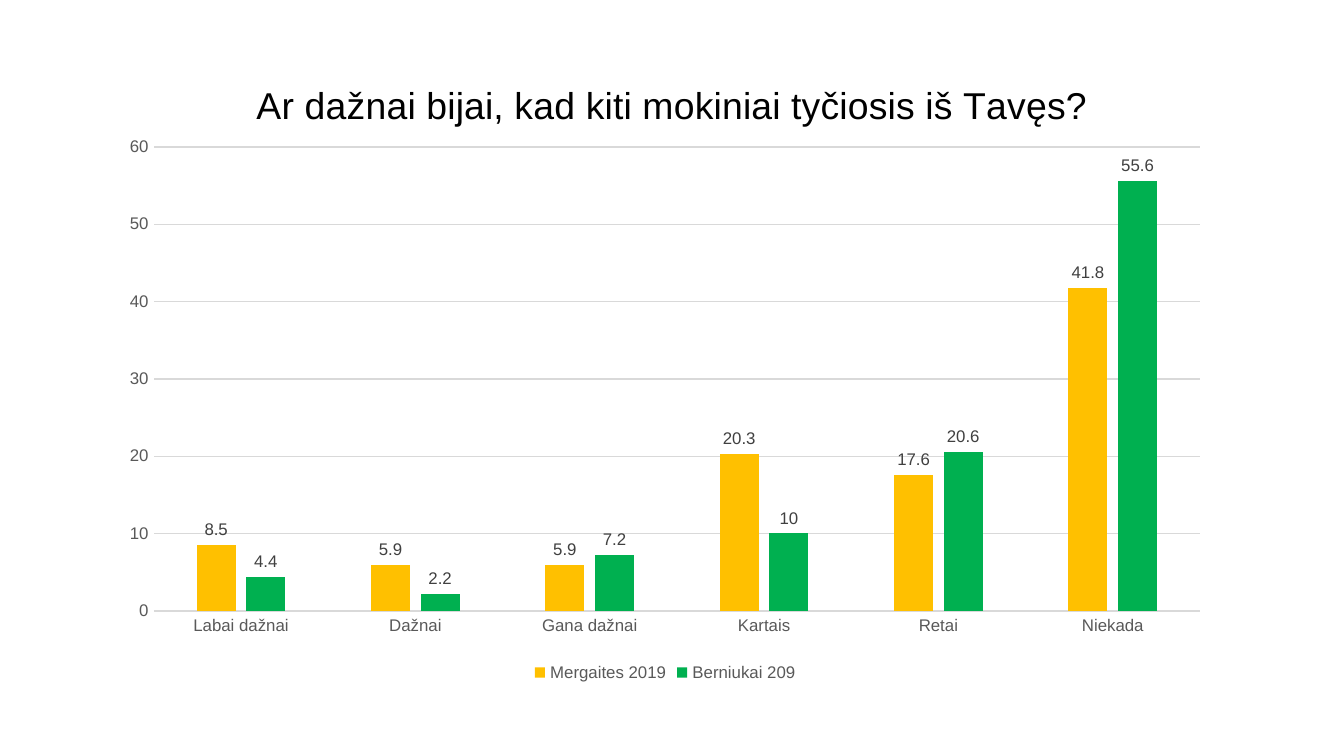
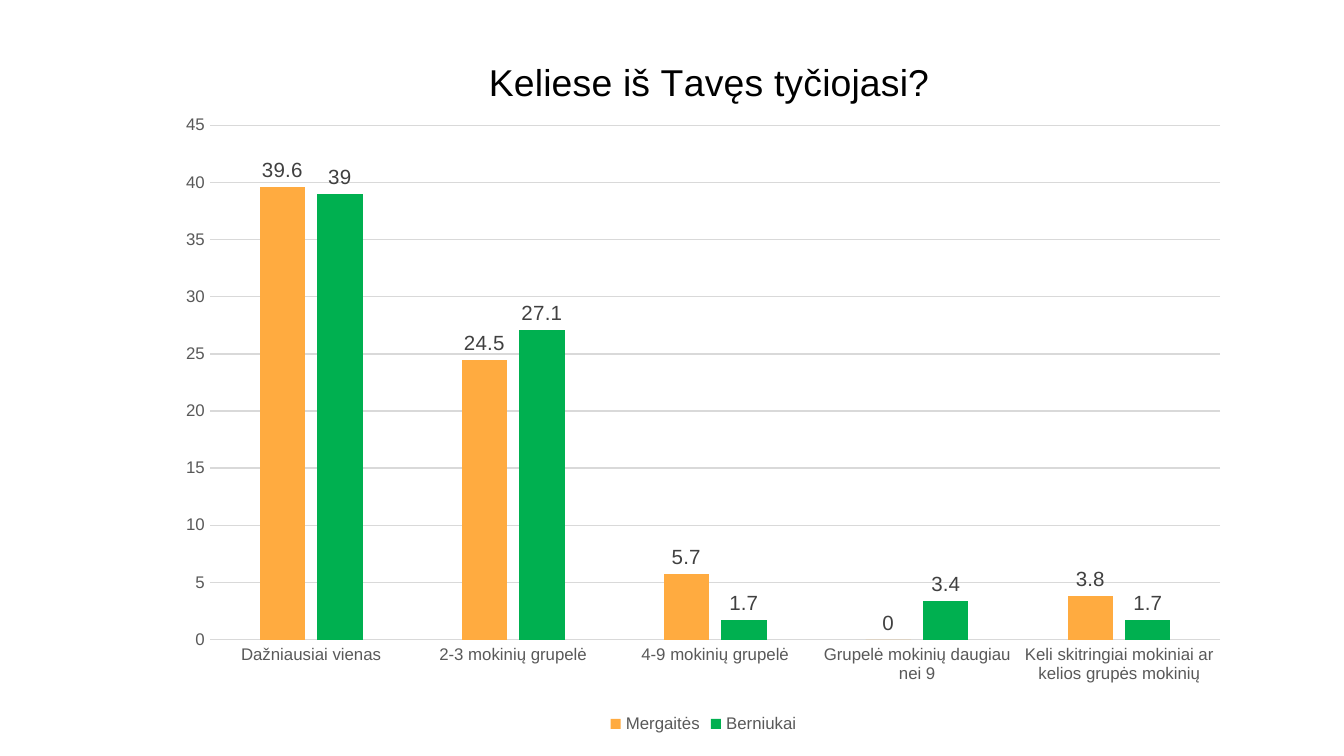
"""Build two survey slides, each with a clustered column chart."""
import pptx
import pptx.chart.data
import pptx.dml.color
import pptx.enum.chart
import pptx.oxml
import pptx.oxml.ns
import pptx.util

Cm = pptx.util.Cm
Pt = pptx.util.Pt
qn = pptx.oxml.ns.qn

COLORS = {
    "title": "000000",
    "axis": "595959",
    "label": "404040",
    "grid": "D9D9D9",
    "yellow": "FFC000",
    "orange": "FFAB40",
    "green": "00B050",
}


class Deck:
    """Hold the shared style and the current slide."""

    font = "Arial"

    def __init__(self):
        self.prs = pptx.Presentation()
        self.prs.slide_width = Cm(25.4)
        self.prs.slide_height = Cm(14.29)
        self.slide = None

    def rgb(self, name):
        return pptx.dml.color.RGBColor.from_string(COLORS[name])

    def add_slide(self):
        self.slide = self.prs.slides.add_slide(self.prs.slide_layouts[6])

    def style_font(self, font, size, color):
        font.name = self.font
        font.size = Pt(size)
        font.bold = False
        font.color.rgb = self.rgb(color)

    def style_line(self, line):
        line.color.rgb = self.rgb("grid")
        line.width = Pt(0.75)

    def place(self, parent, index, box, frame, inner=False):
        """Set a manual layout from a slide position in centimetres."""
        for old in parent.findall(qn("c:layout")):
            parent.remove(old)
        left, top, width, height = frame
        fractions = [(box[0] - left) / width, (box[1] - top) / height]
        if inner:
            fractions += [box[2] / width, box[3] / height]
        target = '<c:layoutTarget val="inner"/>' if inner else ""
        modes = '<c:xMode val="edge"/><c:yMode val="edge"/>'
        values = "".join(
            f'<c:{key} val="{value:.4f}"/>' for key, value in zip("xywh", fractions)
        )
        layout = pptx.oxml.parse_xml(
            f'<c:layout {pptx.oxml.ns.nsdecls("c")}><c:manualLayout>'
            f"{target}{modes}{values}</c:manualLayout></c:layout>"
        )
        parent.insert(index, layout)

    def add_title(self, chart, text, position, frame):
        title = chart.chart_title
        tf = title.text_frame
        tf.text = text
        self.style_font(tf.paragraphs[0].runs[0].font, 20, "title")
        title.include_in_layout = False
        self.place(chart.element.find(".//" + qn("c:title")), 1, position, frame)

    def style_axes(self, chart, maximum, step):
        for axis in (chart.category_axis, chart.value_axis):
            axis.major_tick_mark = pptx.enum.chart.XL_TICK_MARK.NONE
            axis.minor_tick_mark = pptx.enum.chart.XL_TICK_MARK.NONE
            self.style_font(axis.tick_labels.font, 9, "axis")
        self.style_line(chart.category_axis.format.line)
        axis = chart.value_axis
        axis.minimum_scale = 0
        axis.maximum_scale = maximum
        axis.major_unit = step
        axis.format.line.fill.background()
        axis.has_major_gridlines = True
        self.style_line(axis.major_gridlines.format.line)

    def style_series(self, series, color, label_size):
        series.format.fill.solid()
        series.format.fill.fore_color.rgb = self.rgb(color)
        series.invert_if_negative = False
        labels = series.data_labels
        labels.show_value = True
        labels.position = pptx.enum.chart.XL_LABEL_POSITION.OUTSIDE_END
        self.style_font(labels.font, label_size, "label")

    def add_legend(self, chart):
        chart.has_legend = True
        chart.legend.position = pptx.enum.chart.XL_LEGEND_POSITION.BOTTOM
        chart.legend.include_in_layout = False
        self.style_font(chart.legend.font, 9, "axis")

    def add_columns(self, title, title_at, frame, plot_box, categories, series,
                    maximum, step, label_size):
        data = pptx.chart.data.CategoryChartData()
        data.categories = categories
        for name, _, values in series:
            data.add_series(name, values)
        kind = pptx.enum.chart.XL_CHART_TYPE.COLUMN_CLUSTERED
        box = [Cm(value) for value in frame]
        chart = self.slide.shapes.add_chart(kind, *box, data).chart
        self.style_font(chart.font, 10, "title")
        self.add_title(chart, title, title_at, frame)
        self.add_legend(chart)
        self.style_axes(chart, maximum, step)
        plot = chart.plots[0]
        plot.gap_width = 219
        plot.overlap = -27
        plot.vary_by_categories = False
        for item, (_, color, _) in zip(plot.series, series):
            self.style_series(item, color, label_size)
        area = chart.element.find(".//" + qn("c:plotArea"))
        self.place(area, 0, plot_box, frame, inner=True)


def main():
    deck = Deck()

    deck.add_slide()
    deck.add_columns(
        title="Ar dažnai bijai, kad kiti mokiniai tyčiosis iš Tavęs?",
        title_at=(4.72, 1.42),
        frame=(2.03, 0.91, 21.08, 12.09),
        plot_box=(2.91, 2.78, 19.77, 8.77),
        categories=["Labai dažnai", "Dažnai", "Gana dažnai", "Kartais", "Retai", "Niekada"],
        series=[
            ("Mergaites 2019", "yellow", (8.5, 5.9, 5.9, 20.3, 17.6, 41.8)),
            ("Berniukai 209", "green", (4.4, 2.2, 7.2, 10, 20.6, 55.6)),
        ],
        maximum=60,
        step=10,
        label_size=9,
    )

    deck.add_slide()
    deck.add_columns(
        title="Keliese iš Tavęs tyčiojasi?",
        title_at=(9.11, 0.98),
        frame=(3.12, 0.46, 20.35, 13.51),
        plot_box=(3.97, 2.37, 19.09, 9.72),
        categories=[
            "Dažniausiai vienas",
            "2-3 mokinių grupelė",
            "4-9 mokinių grupelė",
            "Grupelė mokinių daugiau nei 9",
            "Keli skitringiai mokiniai ar kelios grupės mokinių",
        ],
        series=[
            ("Mergaitės", "orange", (39.6, 24.5, 5.7, 0, 3.8)),
            ("Berniukai", "green", (39, 27.1, 1.7, 3.4, 1.7)),
        ],
        maximum=45,
        step=5,
        label_size=11,
    )

    deck.prs.save("out.pptx")


if __name__ == "__main__":
    main()
